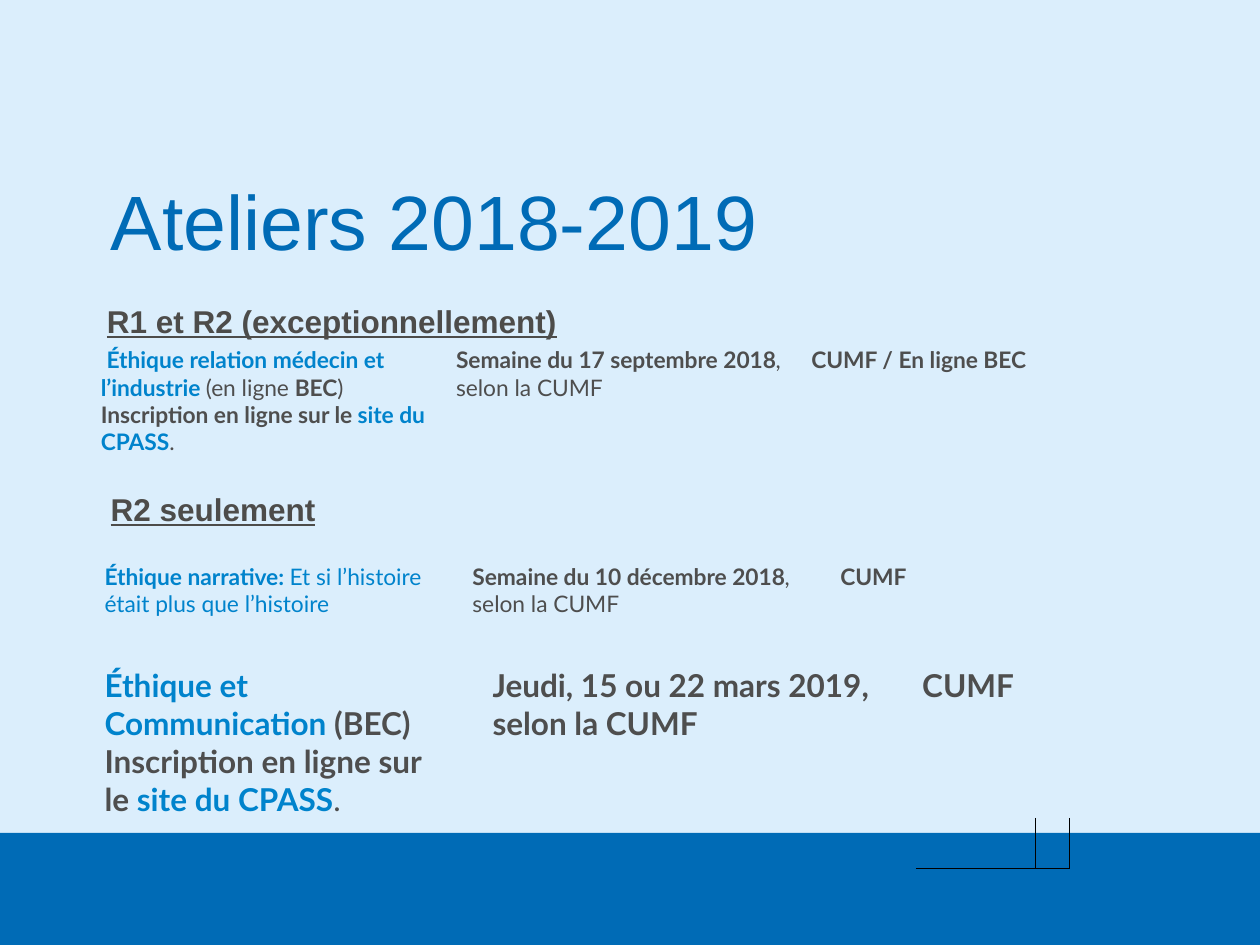
from lxml import etree
from pptx import Presentation
from pptx.dml.color import RGBColor
from pptx.enum import shapes, text
from pptx.oxml import ns
from pptx.util import Inches, Pt

NAVY, BLUE, GREY, DARK = "006BB6", "0083CC", "4E4E4E", "4D4C4A"
PALE, BLACK = "DBEEFC", "000000"
PLAIN = "{2D5ABB26-0587-4C30-8999-92F81FD0307C}"  # table style without grid

TITLE = "Ateliers 2018-2019"
HEADS = [
    ("R1 et R2 (exceptionnellement)", (0.75, 2.35, 4.98, 0.4)),
    ("R2 seulement", (0.78, 3.84, 2.13, 0.4)),
]

# Each cell is a list of paragraphs; each run is (text, colour, bold)
TABLES = [
    dict(at=(0.75, 2.75), cols=[2.82] * 3, rows=[0.87], size=13, cells={
        0: [[(" ", BLACK, False),
             ("Éthique relation médecin et l’industrie ", BLUE, True),
             ("(en ligne ", GREY, False), ("BEC", GREY, True),
             (") ", GREY, False)],
            [("Inscription en ligne sur le ", GREY, True),
             ("site du CPASS", BLUE, True), (". ", GREY, False)]],
        1: [[("Semaine du 17 septembre 2018", GREY, True),
             (", selon la CUMF ", GREY, False)]],
        2: [[("CUMF / En ligne BEC ", GREY, True)]],
    }),
    dict(at=(0.78, 4.47), cols=[2.92] * 3, rows=[0.65], size=13, cells={
        0: [[("Éthique narrative: ", BLUE, True),
             ("Et si l’histoire était plus que l’histoire ", BLUE, False)]],
        1: [[("Semaine du 10 décembre 2018", GREY, True),
             (", selon la CUMF ", GREY, False)]],
        2: [[("CUMF ", GREY, True)]],
    }),
    dict(at=(0.78, 5.29), cols=[2.84, 0.16, 3.41, 0.95, 0.27],
         rows=[1, 0.32], size=18, cells={
        0: [[("Éthique et Communication ", BLUE, True),
             ("(BEC) ", GREY, True)],
            [("Inscription en ligne sur le ", GREY, True),
             ("site du CPASS", BLUE, True), (". ", GREY, False)]],
        2: [[("Jeudi, 15 ou 22 mars 2019, selon la CUMF ", GREY, True)]],
        3: [[("CUMF ", GREY, True)]],
    }),
]
RULED = [3, 4]  # columns ruled in the last row of the last table


def rgb(code):
    return RGBColor.from_string(code)


def write(para, words, size=18, face="Lato", color=GREY, bold=False, line=False):
    run = para.add_run()
    run.text = words
    font = run.font
    font.size, font.name = Pt(size), face
    font.bold, font.underline = bold, line
    font.color.rgb = rgb(color)


def rule(cell, sides):
    """Draw black borders on the given sides of a cell."""
    props = cell._tc.get_or_add_tcPr()
    for i, side in enumerate(sides):
        edge = etree.Element(ns.qn(f"a:ln{side}"), w=str(Pt(1)))
        fill = etree.SubElement(edge, ns.qn("a:solidFill"))
        etree.SubElement(fill, ns.qn("a:srgbClr"), val=BLACK)
        props.insert(i, edge)


def add_grid(slide, at, cols, rows, size, cells):
    box = [Inches(v) for v in (*at, sum(cols), sum(rows))]
    grid = slide.shapes.add_table(len(rows), len(cols), *box).table
    grid.first_row = grid.horz_banding = False
    grid._tbl.tblPr.find(ns.qn("a:tableStyleId")).text = PLAIN
    for col, wide in zip(grid.columns, cols):
        col.width = Inches(wide)
    for row, high in zip(grid.rows, rows):
        row.height = Inches(high)
    for cell in grid.iter_cells():
        cell.fill.background()
    for i, paras in cells.items():
        cell = grid.cell(0, i)
        cell.margin_left = cell.margin_right = Inches(0.05)
        cell.margin_top = cell.margin_bottom = 0
        frame = cell.text_frame
        for n, runs in enumerate(paras):
            para = frame.add_paragraph() if n else frame.paragraphs[0]
            for words, color, bold in runs:
                write(para, words, size=size, color=color, bold=bold)
    return grid


def main():
    deck = Presentation()
    deck.slide_width, deck.slide_height = Inches(10), Inches(7.5)
    slide = deck.slides.add_slide(deck.slide_layouts[5])
    slide.background.fill.solid()
    slide.background.fill.fore_color.rgb = rgb(PALE)

    band = slide.shapes.add_shape(
        shapes.MSO_SHAPE.RECTANGLE, 0, Inches(6.61), Inches(10), Inches(0.89))
    band.shadow.inherit = False
    band.fill.solid()
    band.fill.fore_color.rgb = rgb(NAVY)
    band.line.fill.background()

    title = slide.shapes.title
    title.left, title.top = Inches(0.78), Inches(0.7)
    title.width, title.height = Inches(8.45), Inches(1.47)
    frame = title.text_frame
    frame.vertical_anchor = text.MSO_ANCHOR.BOTTOM
    para = frame.paragraphs[0]
    para.alignment, para.line_spacing = text.PP_ALIGN.LEFT, 0.9
    write(para, TITLE, size=44, face="Arial", color=NAVY)

    for words, at in HEADS:
        frame = slide.shapes.add_textbox(*map(Inches, at)).text_frame
        frame.word_wrap = True
        frame.auto_size = text.MSO_AUTO_SIZE.SHAPE_TO_FIT_TEXT
        write(frame.paragraphs[0], words, face="Arial", color=DARK,
              bold=True, line=True)

    grids = [add_grid(slide, **spec) for spec in TABLES]
    for i in RULED:
        rule(grids[-1].cell(1, i), "LRB" if i == RULED[-1] else "RB")
    deck.save("out.pptx")


if __name__ == "__main__":
    main()
